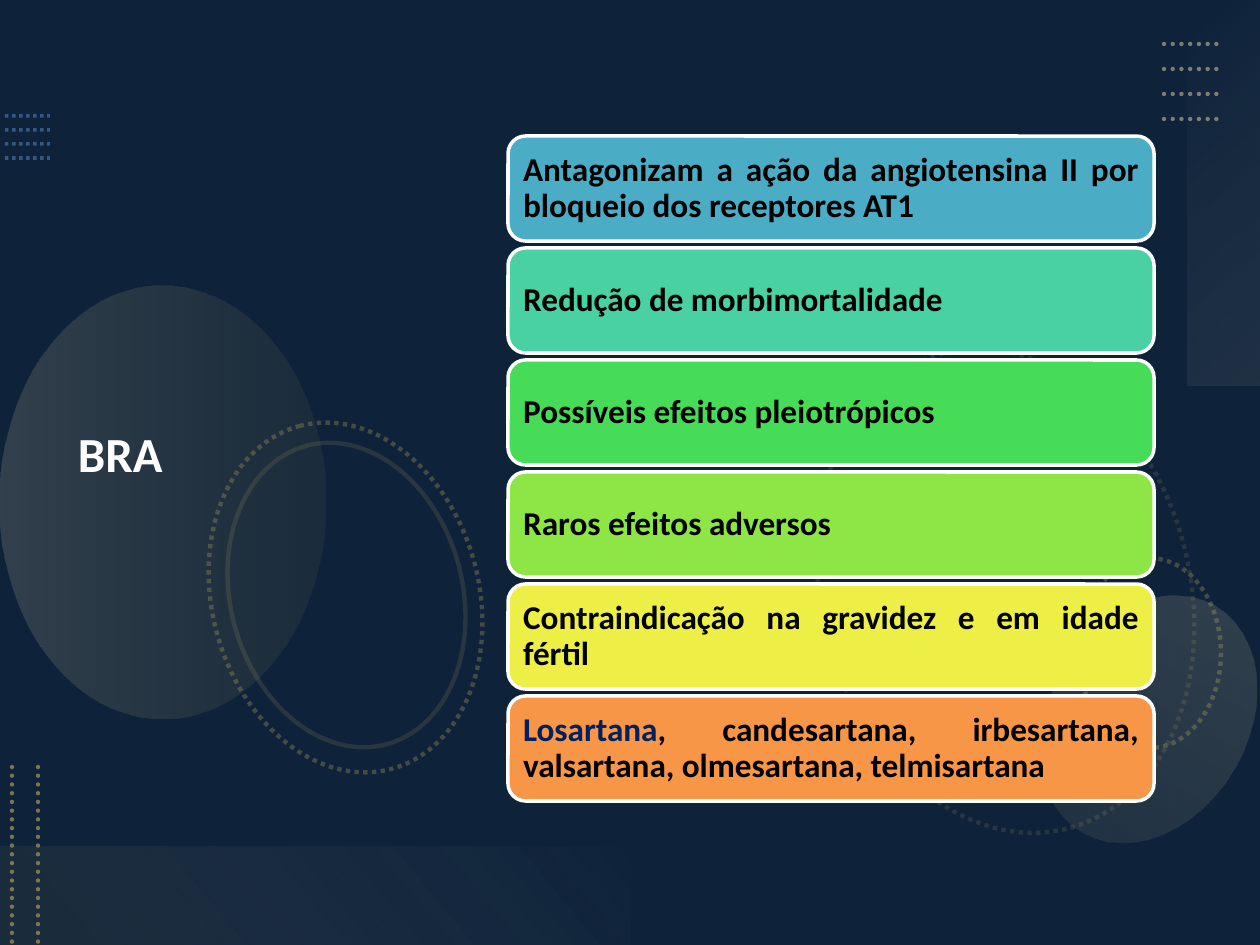
from dataclasses import dataclass
from typing import Optional

from lxml.etree import SubElement
from pptx import Presentation
from pptx.dml.color import RGBColor
from pptx.enum.dml import MSO_LINE
from pptx.enum.shapes import MSO_CONNECTOR, MSO_SHAPE as Preset
from pptx.enum.text import MSO_ANCHOR as Anchor, PP_ALIGN as Align
from pptx.oxml.ns import qn
from pptx.util import Emu, Pt

PX = 914400 / 126
WIDTH, HEIGHT = 1260, 945
TITLE_ONLY_LAYOUT = 5

NAVY = RGBColor(0x1F, 0x49, 0x7D)
BLACK = RGBColor(0x00, 0x00, 0x00)
WHITE = RGBColor(0xFF, 0xFF, 0xFF)
DEEP_BLUE = RGBColor(0x00, 0x20, 0x60)
SKY = RGBColor(0x55, 0x8E, 0xD5)
OLIVE = RGBColor(0x94, 0x8A, 0x54)
SAND = RGBColor(0xC4, 0xBD, 0x97)
CREAM = RGBColor(0xF8, 0xF7, 0xF3)
PALE_OLIVE = RGBColor(0xF5, 0xF4, 0xED)
TEAL = RGBColor(0x4B, 0xAC, 0xC6)
MINT = RGBColor(0x49, 0xD1, 0xA3)
GREEN = RGBColor(0x47, 0xDC, 0x57)
LIME = RGBColor(0x8D, 0xE6, 0x46)
YELLOW = RGBColor(0xEE, 0xEF, 0x46)
ORANGE = RGBColor(0xF7, 0x96, 0x46)


@dataclass(frozen=True)
class Frame:
    left: int
    top: int
    width: int
    height: int
    rotation: int = 0


@dataclass(frozen=True)
class Stroke:
    color: RGBColor
    width: float = 2.5
    opacity: int = 100
    dotted: bool = True
    round_cap: bool = False


@dataclass(frozen=True)
class Stop:
    position: float
    color: RGBColor
    opacity: int


@dataclass(frozen=True)
class Glow:
    preset: Preset
    frame: Frame
    angle: int
    stops: tuple[Stop, Stop]


@dataclass(frozen=True)
class Card:
    fill: RGBColor
    runs: tuple[tuple[str, RGBColor], ...]
    align: Optional[Align] = None


SKY_DOTS = Stroke(SKY, 2, 50)
SAND_DOTS = Stroke(SAND, opacity=60, round_cap=True)
OLIVE_DOTS = Stroke(OLIVE, opacity=80, round_cap=True)

RINGS = (
    (Frame(760, 407, 491, 368, 75), Stroke(OLIVE, opacity=20)),
    (Frame(1055, 582, 190, 142, 270), Stroke(OLIVE, opacity=40)),
    (Frame(168, 464, 355, 267, 75), Stroke(OLIVE, opacity=40)),
    (Frame(192, 479, 309, 232, 75), Stroke(OLIVE, opacity=20, dotted=False)),
)
GLOWS = (
    Glow(Preset.OVAL, Frame(-54, 340, 433, 325, 270), 90,
         (Stop(0, SAND, 20), Stop(1, OLIVE, 10))),
    Glow(Preset.OVAL, Frame(1050, 588, 197, 262, 210), 90,
         (Stop(0, SAND, 10), Stop(1, SAND, 20))),
    Glow(Preset.RECTANGLE, Frame(1031, 156, 386, 73, 270), 140,
         (Stop(0, CREAM, 0), Stop(1, SAND, 10))),
    Glow(Preset.RECTANGLE, Frame(0, 847, 630, 98, 180), 140,
         (Stop(0.1, OLIVE, 10), Stop(1, PALE_OLIVE, 0))),
)
CARD_FRAME = Frame(508, 136, 646, 105)
CARD_STEP = 112
CARDS = (
    Card(TEAL, (("Antagonizam a ação da angiotensina II por bloqueio dos receptores AT1", BLACK),),
         Align.JUSTIFY),
    Card(MINT, (("Redução de morbimortalidade", BLACK),)),
    Card(GREEN, (("Possíveis efeitos pleiotrópicos", BLACK),)),
    Card(LIME, (("Raros efeitos adversos", BLACK),)),
    Card(YELLOW, (("Contraindicação na gravidez e em idade fértil", BLACK),), Align.JUSTIFY),
    Card(ORANGE, (("Losartana", DEEP_BLUE),
                  (", candesartana, irbesartana, valsartana, olmesartana, telmisartana", BLACK)),
         Align.JUSTIFY),
)


def px(value: float) -> Emu:
    return Emu(round(value * PX))


def set_opacity(shape, *percents: int) -> None:
    """Give the shape's colours, in document order, these opacities."""
    for color, percent in zip(shape._element.spPr.iter(qn("a:srgbClr")), percents):
        SubElement(color, qn("a:alpha"), val=str(percent * 1000))


def add_shape(slide, preset: Preset, frame: Frame):
    shape = slide.shapes.add_shape(
        preset, px(frame.left), px(frame.top), px(frame.width), px(frame.height))
    shape.rotation = frame.rotation
    shape.shadow.inherit = False
    shape.line.fill.background()
    return shape


def apply_stroke(shape, stroke: Stroke) -> None:
    shape.line.color.rgb = stroke.color
    shape.line.width = Pt(stroke.width)
    if stroke.dotted:
        shape.line.dash_style = MSO_LINE.ROUND_DOT
    if stroke.round_cap:
        shape._element.spPr.find(qn("a:ln")).set("cap", "rnd")
    if stroke.opacity < 100:
        set_opacity(shape, stroke.opacity)


def add_line(slide, start: tuple[int, int], end: tuple[int, int], stroke: Stroke) -> None:
    line = slide.shapes.add_connector(
        MSO_CONNECTOR.STRAIGHT, *(px(value) for value in start + end))
    apply_stroke(line, stroke)
    SubElement(line._element.spPr, qn("a:effectLst"))


def add_ring(slide, frame: Frame, stroke: Stroke) -> None:
    ring = add_shape(slide, Preset.OVAL, frame)
    ring.fill.background()
    apply_stroke(ring, stroke)


def add_glow(slide, glow: Glow) -> None:
    shape = add_shape(slide, glow.preset, glow.frame)
    shape.fill.gradient()
    shape.fill.gradient_angle = 360 - glow.angle
    for target, stop in zip(shape.fill.gradient_stops, glow.stops):
        target.position = stop.position
        target.color.rgb = stop.color
    set_opacity(shape, *(stop.opacity for stop in glow.stops))


def write_text(shape, runs, *, size: int, align: Optional[Align] = None,
               inset: tuple[int, int] = (13, 6)) -> None:
    """Fill a shape with one bold paragraph made of (text, colour) runs."""
    frame = shape.text_frame
    frame.word_wrap = True
    frame.vertical_anchor = Anchor.MIDDLE
    frame.margin_left = frame.margin_right = px(inset[0])
    frame.margin_top = frame.margin_bottom = px(inset[1])
    paragraph = frame.paragraphs[0]
    paragraph.alignment = align or Align.LEFT
    paragraph.line_spacing = 0.9
    for text, color in runs:
        run = paragraph.add_run()
        run.text = text
        run.font.name = "Calibri"
        run.font.size = Pt(size)
        run.font.bold = True
        run.font.color.rgb = color


def add_backdrop(slide) -> None:
    slide.background.fill.solid()
    slide.background.fill.fore_color.rgb = NAVY
    veil = add_shape(slide, Preset.RECTANGLE, Frame(0, 0, WIDTH, HEIGHT))
    veil.fill.solid()
    veil.fill.fore_color.rgb = BLACK
    set_opacity(veil, 53)
    for frame, stroke in RINGS:
        add_ring(slide, frame, stroke)
    for glow in GLOWS:
        add_glow(slide, glow)
    for row in range(4):
        sky_y, sand_y = 116 + 14 * row, 44 + 25 * row
        add_line(slide, (5, sky_y), (50, sky_y), SKY_DOTS)
        add_line(slide, (1164, sand_y), (1221, sand_y), SAND_DOTS)
    for x in (12, 38):
        add_line(slide, (x, 767), (x, HEIGHT), OLIVE_DOTS)


def add_title(slide) -> None:
    title = slide.shapes.title
    title.left, title.top, title.width, title.height = px(65), px(68), px(433), px(777)
    write_text(title, (("BRA", WHITE),), size=28)
    slide.shapes._spTree.append(title._element)


def add_card(slide, index: int, card: Card) -> None:
    frame = Frame(CARD_FRAME.left, CARD_FRAME.top + CARD_STEP * index,
                  CARD_FRAME.width, CARD_FRAME.height)
    shape = add_shape(slide, Preset.ROUNDED_RECTANGLE, frame)
    shape.fill.solid()
    shape.fill.fore_color.rgb = card.fill
    apply_stroke(shape, Stroke(WHITE, 2, dotted=False))
    write_text(shape, card.runs, size=19, align=card.align, inset=(10, 10))


def main() -> None:
    presentation = Presentation()
    presentation.slide_width, presentation.slide_height = px(WIDTH), px(HEIGHT)
    slide = presentation.slides.add_slide(presentation.slide_layouts[TITLE_ONLY_LAYOUT])
    add_backdrop(slide)
    add_title(slide)
    for index, card in enumerate(CARDS):
        add_card(slide, index, card)
    presentation.save("out.pptx")


if __name__ == "__main__":
    main()
